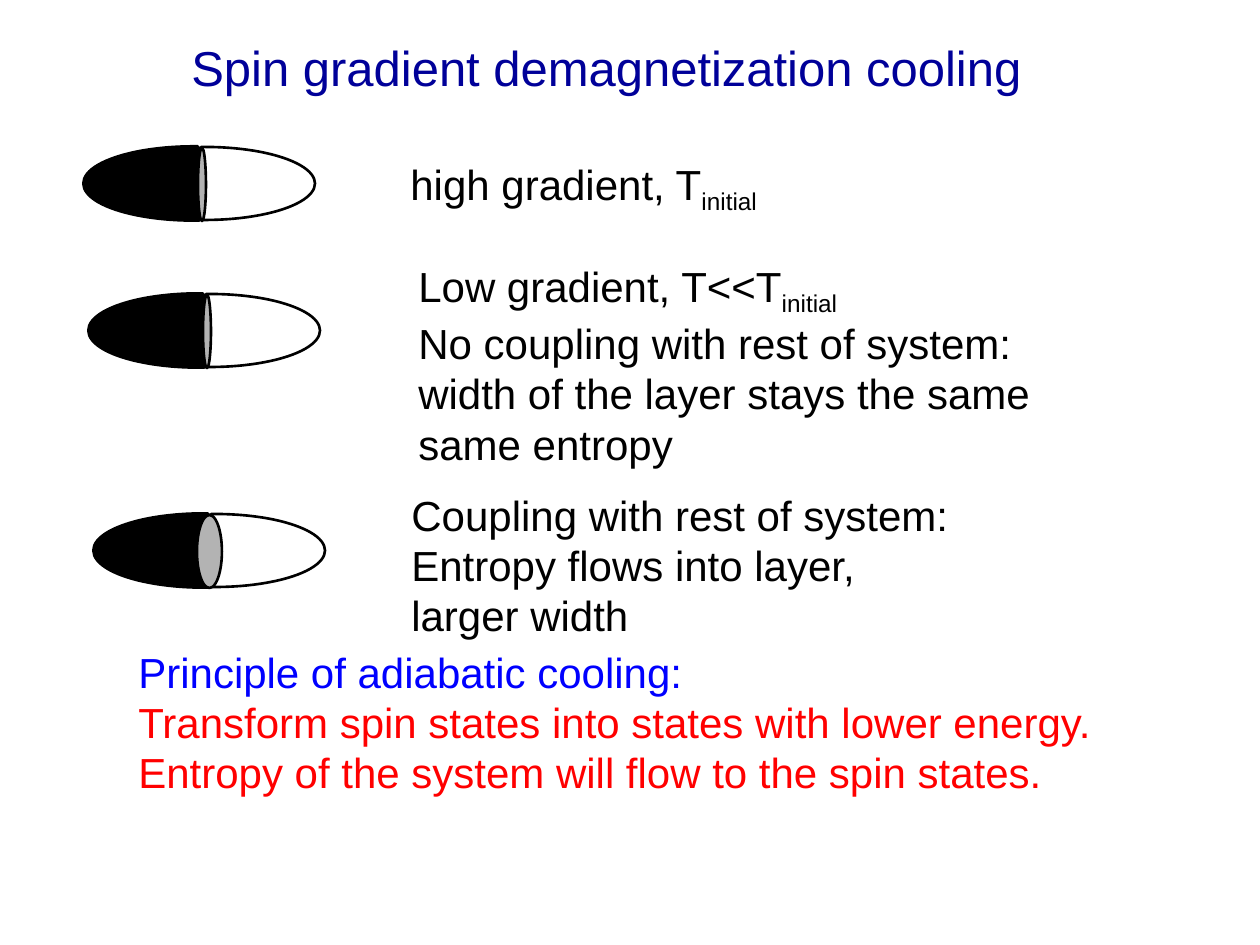
from pptx import Presentation
from pptx import util as u
from pptx.dml.color import RGBColor
from pptx.enum import shapes, text

SCALE = 914400 / 126  # EMU per px
BLACK = RGBColor(0x00, 0x00, 0x00)
WHITE = RGBColor(0xFF, 0xFF, 0xFF)
GRAY = RGBColor(0xB3, 0xB3, 0xB3)
NAVY = RGBColor(0x00, 0x00, 0x99)
BLUE = RGBColor(0x00, 0x00, 0xFF)
RED = RGBColor(0xFF, 0x00, 0x00)

presentation = Presentation()
presentation.slide_width = u.Emu(round(1260 * SCALE))
presentation.slide_height = u.Emu(round(945 * SCALE))
slide = presentation.slides.add_slide(presentation.slide_layouts[6])


def add_outline(kind, left, top, width, fill, line_width):
    box = [u.Emu(round(px * SCALE)) for px in (left, top, width, 73)]
    shape = slide.shapes.add_shape(kind, *box)
    shape.shadow.inherit = False
    shape.fill.solid()
    shape.fill.fore_color.rgb = fill
    shape.line.color.rgb = BLACK
    shape.line.width = u.Pt(line_width)
    if kind == shapes.MSO_SHAPE.CHORD:
        shape.adjustments[0] = 49.29
        shape.adjustments[1] = 165.72
    return shape


def add_text(box, paragraphs, size=24, color=BLACK, wrap=True):
    """Each paragraph is a list of runs: (text, subscript or colour or None)."""
    frame = slide.shapes.add_textbox(*[u.Emu(round(px * SCALE)) for px in box]).text_frame
    frame.word_wrap = wrap
    frame.auto_size = text.MSO_AUTO_SIZE.SHAPE_TO_FIT_TEXT
    for index, runs in enumerate(paragraphs):
        paragraph = frame.paragraphs[0] if index == 0 else frame.add_paragraph()
        paragraph.font.name = "Arial"
        paragraph.font.size = u.Pt(size)
        paragraph.font.color.rgb = color
        for words, style in runs:
            if words == "\n":
                paragraph.add_line_break()
                continue
            run = paragraph.add_run()
            run.text = words
            if style == "subscript":
                run.font._element.set("baseline", "-25000")
            elif style is not None:
                run.font.color.rgb = style


# Clouds: spin-up half, spin-down half, mixed layer between them
for left, top, layer_left, layer_width in ((84, 147, 198, 8),
                                           (89, 294, 203, 8),
                                           (94, 514, 197, 25)):
    right_half = add_outline(shapes.MSO_SHAPE.CHORD, left + 11, top, 220, WHITE, 1.5)
    right_half._element.spPr.xfrm.set("flipH", "1")
    add_outline(shapes.MSO_SHAPE.CHORD, left, top, 220, BLACK, 2.25)
    add_outline(shapes.MSO_SHAPE.OVAL, layer_left, top + 1, layer_width, GRAY, 1.5)

# Title
add_text((179, 31, 914, 72), [[("Spin gradient demagnetization cooling", None)]],
         size=28, color=NAVY)

# Description of each cloud
add_text((398, 152, 382, 63),
         [[("high gradient, T", None), ("initial", "subscript")]], wrap=False)
add_text((406, 254, 643, 217),
         [[("Low gradient, T<<T", None), ("initial", "subscript")],
          [("No coupling with rest of system:", None), ("\n", None),
           ("width of the layer stays the same", None)],
          [("same entropy", None)]], wrap=False)
add_text((399, 483, 568, 165),
         [[("Coupling with rest of system:", None)],
          [("Entropy flows into layer,", None)],
          [("larger width", None)]], wrap=False)

# Principle
add_text((126, 640, 1008, 217),
         [[("Principle of adiabatic cooling:", BLUE), ("\n", None),
           ("Transform spin states into states with lower energy. "
            "Entropy of the system will flow to the spin states.", RED)]])

presentation.save("out.pptx")
